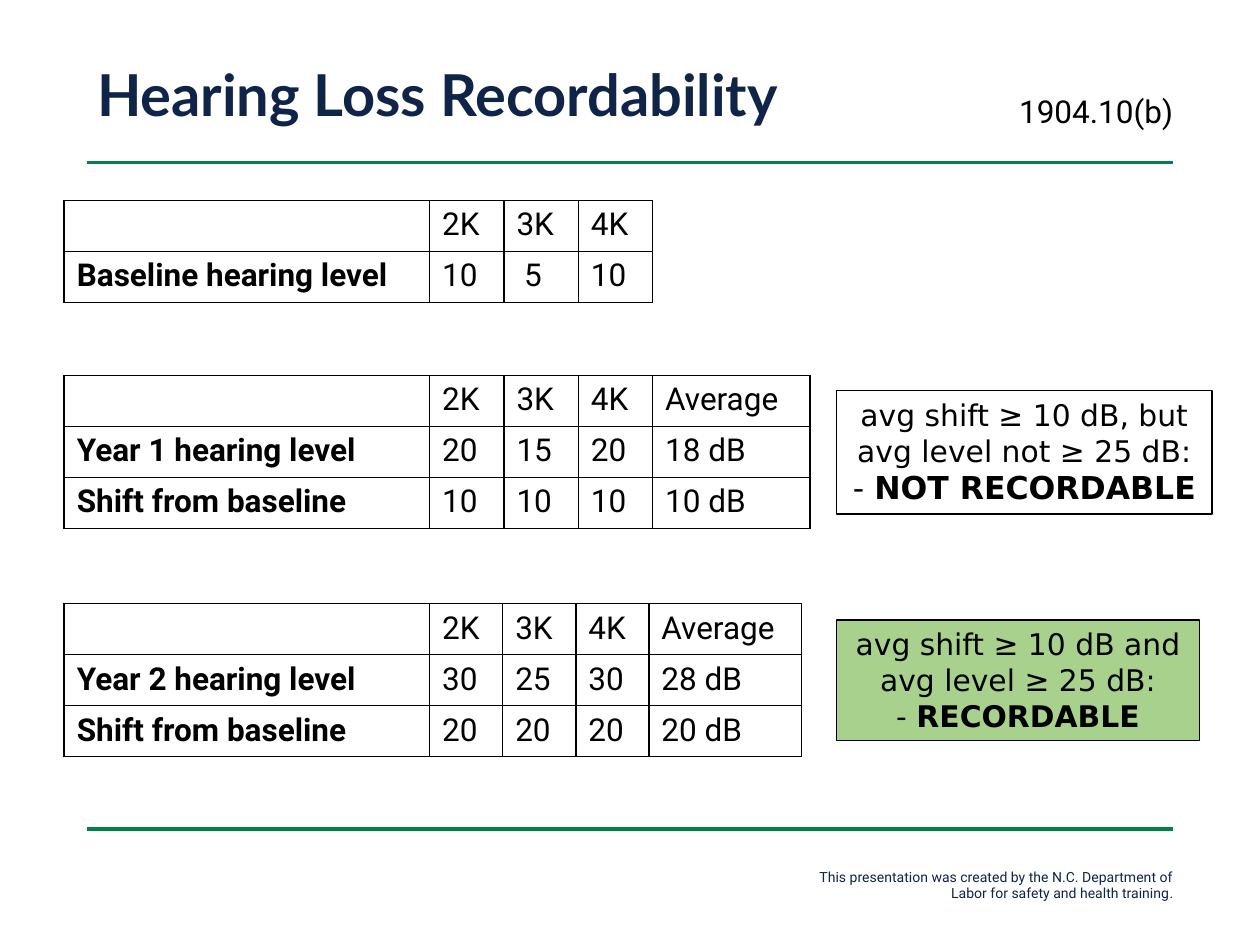
from lxml.etree import SubElement
from pptx import Presentation
from pptx.dml.color import RGBColor
from pptx.enum.shapes import MSO_CONNECTOR, MSO_SHAPE
from pptx.enum.text import MSO_ANCHOR, MSO_AUTO_SIZE, PP_ALIGN
from pptx.oxml.ns import qn
from pptx.util import Inches, Pt

COLORS = {"green": "00814A", "navy": "102447", "purple": "2B0E62",
          "black": "000000", "pale green": "A9D18E"}
BODY, TITLE, NOTE = "Roboto", "Lato", "DejaVu Sans"

TITLE_TEXT = "Hearing Loss Recordability"
CITATION = "1904.10(b)"
CREDIT = ("This presentation was created by the N.C. Department of Labor "
          "for safety and health training")
RULE_TOPS = [1.29, 6.58]

TABLE_LEFT, LABEL_WIDTH, ROW_HEIGHT = 0.51, 2.9, 0.405
FREQUENCIES = ["", "2K", "3K", "4K"]
# top, frequency column width, average column width, rows
TABLES = [
    (1.59, 0.59, 0, [
        FREQUENCIES,
        ["Baseline hearing level", "10", "5", "10"]]),
    (2.98, 0.59, 1.25, [
        FREQUENCIES + ["Average"],
        ["Year 1 hearing level", "20", "15", "20", "18 dB"],
        ["Shift from baseline", "10", "10", "10", "10 dB"]]),
    (4.79, 0.58, 1.21, [
        FREQUENCIES + ["Average"],
        ["Year 2 hearing level", "30", "25", "30", "28 dB"],
        ["Shift from baseline", "20", "20", "20", "20 dB"]]),
]

# top, width, height, fill, criteria, verdict, verdict size
VERDICTS = [
    (3.1, 2.98, 0.98, None, "avg shift ≥ 10 dB, but avg level not ≥ 25 dB:",
     "NOT RECORDABLE", 18),
    (4.92, 2.88, 0.96, "pale green", "avg shift ≥ 10 dB and avg level ≥ 25 dB:",
     "RECORDABLE", 17),
]
VERDICT_LEFT = 6.64


def rgb(name):
    return RGBColor.from_string(COLORS[name])


def style(p, name, size, color="black", bold=None, align=None):
    p.font.name, p.font.size, p.font.bold = name, Pt(size), bold
    p.font.color.rgb = rgb(color)
    p.alignment = align


def add_rule(slide, top):
    y = Inches(top)
    line = slide.shapes.add_connector(
        MSO_CONNECTOR.STRAIGHT, Inches(0.69), y, Inches(9.31), y)
    line.line.color.rgb = rgb("green")
    line.line.width = Pt(2)
    SubElement(line._element.spPr, qn("a:effectLst"))


def add_text(slide, left, top, width, height, text, wrap=True):
    sp = slide.shapes.add_textbox(*map(Inches, (left, top, width, height)))
    sp.text_frame.word_wrap = wrap
    p = sp.text_frame.paragraphs[0]
    p.add_run().text = text
    return p


def add_borders(cell):
    for side in "LRTB":
        ln = SubElement(cell._tc.get_or_add_tcPr(), qn(f"a:ln{side}"), w=str(Pt(1)))
        fill = SubElement(ln, qn("a:solidFill"))
        SubElement(fill, qn("a:srgbClr"), val=COLORS["black"])


def add_levels(slide, top, freq_width, avg_width, rows):
    widths = [LABEL_WIDTH] + [freq_width] * 3 + ([avg_width] if avg_width else [])
    table = slide.shapes.add_table(
        len(rows), len(widths), Inches(TABLE_LEFT), Inches(top),
        Inches(sum(widths)), Inches(ROW_HEIGHT * len(rows))).table
    table.first_row = table.horz_banding = False
    for column, width in zip(table.columns, widths):
        column.width = Inches(width)
    for r, row in enumerate(rows):
        table.rows[r].height = Inches(ROW_HEIGHT)
        for c, text in enumerate(row):
            cell = table.cell(r, c)
            add_borders(cell)
            cell.fill.background()
            cell.text = text
            if len(text) == 1:
                cell.margin_left = Inches(0.16)
            style(cell.text_frame.paragraphs[0], BODY, 18, bold=c == 0)


def add_verdict(slide, top, width, height, fill, criteria, verdict, size):
    sp = slide.shapes.add_shape(
        MSO_SHAPE.RECTANGLE, *map(Inches, (VERDICT_LEFT, top, width, height)))
    sp.shadow.inherit = False
    if fill:
        sp.fill.solid()
        sp.fill.fore_color.rgb = rgb(fill)
    else:
        sp.fill.background()
    sp.line.color.rgb = rgb("black")
    sp.line.width = Pt(0.75)
    tf = sp.text_frame
    tf.word_wrap = True
    tf.vertical_anchor = MSO_ANCHOR.TOP
    p = tf.paragraphs[0]
    p.text = criteria
    style(p, NOTE, 17, align=PP_ALIGN.CENTER)
    p = tf.add_paragraph()
    p.add_run().text = "- "
    r = p.add_run()
    r.text = verdict
    r.font.bold = True
    style(p, NOTE, size, align=PP_ALIGN.CENTER)


def main():
    prs = Presentation()
    prs.slide_width, prs.slide_height = Inches(10), Inches(7.5)
    slide = prs.slides.add_slide(prs.slide_layouts[5])

    title = slide.shapes.title
    title.left, title.top, title.width, title.height = map(
        Inches, (0.67, 0.48, 7.67, 0.6))
    title.text = TITLE_TEXT
    tf = title.text_frame
    tf.auto_size = MSO_AUTO_SIZE.NONE
    tf.vertical_anchor = MSO_ANCHOR.MIDDLE
    tf.paragraphs[0].line_spacing = 0.9
    style(tf.paragraphs[0], TITLE, 33, "navy", True, PP_ALIGN.LEFT)

    for top in RULE_TOPS:
        add_rule(slide, top)

    p = add_text(slide, 6.16, 6.84, 3.25, 0.37, CREDIT)
    style(p, BODY, 8, "navy", align=PP_ALIGN.RIGHT)
    r = p.add_run()
    r.text = "."
    r.font.color.rgb = rgb("purple")

    style(add_text(slide, 7.99, 0.68, 1.46, 0.4, CITATION, wrap=False), BODY, 18)

    for levels in TABLES:
        add_levels(slide, *levels)
    for verdict in VERDICTS:
        add_verdict(slide, *verdict)
    prs.save("out.pptx")


if __name__ == "__main__":
    main()
